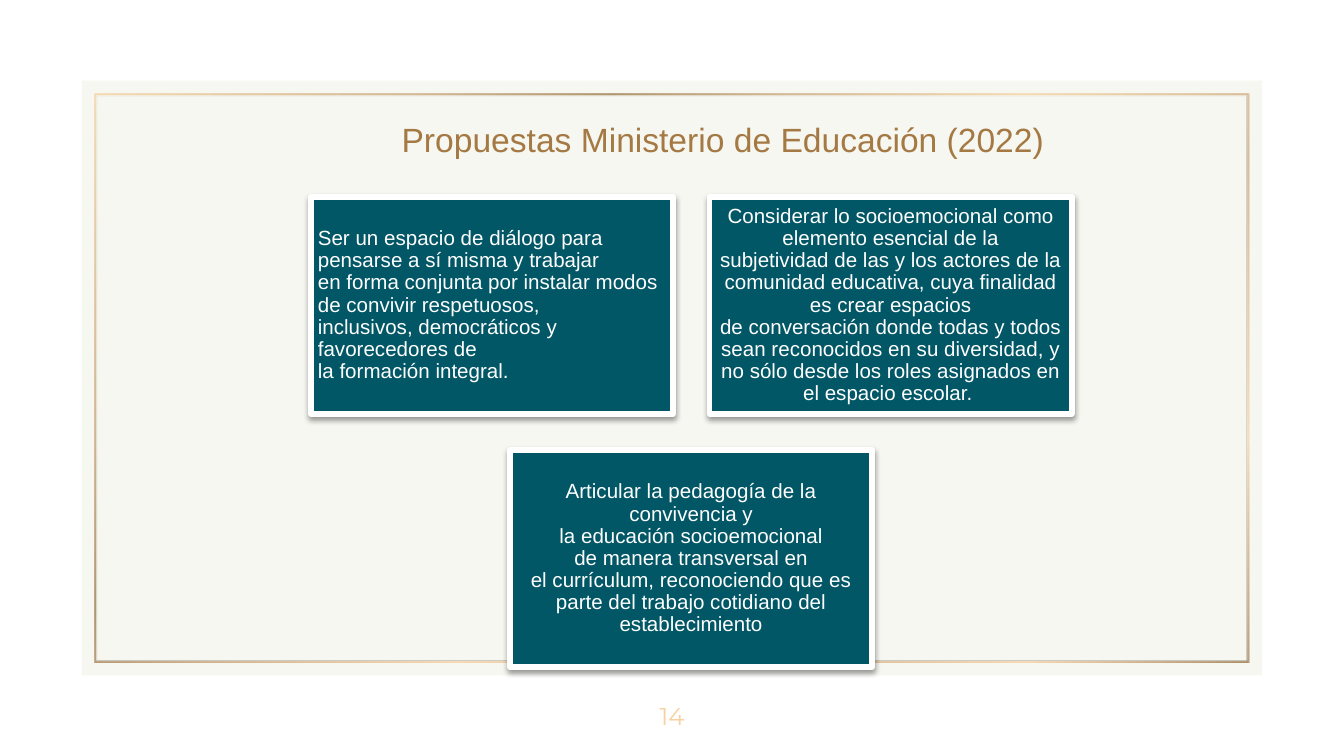
from dataclasses import dataclass

from lxml import etree
from pptx import Presentation
from pptx.dml.color import RGBColor
from pptx.enum.shapes import MSO_SHAPE as Shape
from pptx.enum.text import MSO_ANCHOR as Anchor, PP_ALIGN as Align
from pptx.oxml import parse_xml
from pptx.oxml.ns import nsdecls, qn
from pptx.util import Pt

PX = 4572  # 200 px to the inch
NBSP = chr(160)  # written as ~ in the texts below


@dataclass(frozen=True)
class Theme:
    panel: str = "F5F6F0"
    title: str = "A57944"
    card: str = "025766"
    white: str = "FFFFFF"
    shadow: str = "000000"
    light_gold: str = "F6D2A2"
    mid_gold: str = "C59F72"
    dark_gold: str = "997545"
    font: str = "Arial"
    number_font: str = "Montserrat"
    title_size: int = 18
    card_size: int = 11
    number_size: int = 13


class SlideBuilder:
    def __init__(self, slide, theme):
        self.slide = slide
        self.theme = theme

    def _shape(self, kind, box):
        shape = self.slide.shapes.add_shape(kind, *(n * PX for n in box))
        shape.shadow.inherit = False
        shape.line.fill.background()
        return shape

    def _write(self, shape, text, size, color, font, align, anchor, inset):
        frame = shape.text_frame
        frame.word_wrap = True
        frame.vertical_anchor = anchor
        frame.margin_left = frame.margin_right = inset[0] * PX
        frame.margin_top = frame.margin_bottom = inset[1] * PX
        paragraph = frame.paragraphs[0]
        paragraph.text = text.replace("~", NBSP)
        paragraph.alignment = align
        paragraph.font.name = font
        paragraph.font.size = Pt(size)
        paragraph.font.color.rgb = RGBColor.from_string(color)
        return paragraph

    def panel(self, box, color, opacity):
        panel = self._shape(Shape.RECTANGLE, box)
        panel.fill.solid()
        panel.fill.fore_color.rgb = RGBColor.from_string(color)
        fill_color = panel._element.spPr.find(qn("a:solidFill"))[0]
        etree.SubElement(fill_color, qn("a:alpha"), val=str(opacity * 1000))

    def gold_frame(self, box, stops, opacity):
        border = self._shape(Shape.FRAME, box)
        border.adjustments[0] = 0.004
        stop_xml = "".join(
            f'<a:gs pos="{pos * 1000}"><a:srgbClr val="{color}">'
            f'<a:alpha val="{opacity * 1000}"/></a:srgbClr></a:gs>'
            for pos, color in stops)
        gradient = parse_xml(
            f'<a:gradFill {nsdecls("a")} rotWithShape="1"><a:gsLst>{stop_xml}</a:gsLst>'
            '<a:lin ang="2700000" scaled="0"/></a:gradFill>')
        border._element.spPr.find(qn("a:prstGeom")).addnext(gradient)

    def text(self, box, text, size, color, font, align=Align.LEFT,
             anchor=Anchor.TOP, inset=(20, 10)):
        label = self.slide.shapes.add_textbox(*(n * PX for n in box))
        self._write(label, text, size, color, font, align, anchor, inset)

    def card(self, box, text, align):
        theme = self.theme
        card = self._shape(Shape.RECTANGLE, box)
        card.fill.solid()
        card.fill.fore_color.rgb = RGBColor.from_string(theme.card)
        card.line.color.rgb = RGBColor.from_string(theme.white)
        card.line.width = Pt(3)
        effects = card._element.spPr.find(qn("a:effectLst"))
        effects.append(parse_xml(
            f'<a:outerShdw {nsdecls("a")} blurRad="{Pt(3.1)}" dist="{Pt(1.6)}" '
            f'dir="5400000" rotWithShape="0"><a:srgbClr val="{theme.shadow}">'
            '<a:alpha val="38000"/></a:srgbClr></a:outerShdw>'))
        paragraph = self._write(card, text, theme.card_size, theme.white, theme.font,
                                align, Anchor.MIDDLE, (10, 10))
        paragraph.line_spacing = 0.9


PROPOSALS = [
    ("Ser un espacio de~diálogo~para pensarse a sí misma y trabajar en~forma conjunta "
     "por instalar modos de convivir respetuosos, inclusivos,~democráticos~y "
     "favorecedores de la~formación~integral.~", Align.LEFT),
    ("Considerar lo socioemocional como elemento esencial de la subjetividad~de las y "
     "los actores de la comunidad educativa, cuya finalidad es crear~espacios "
     "de~conversación~donde todas y todos sean reconocidos en su~diversidad, y "
     "no~sólo~desde los roles asignados en el espacio escolar.~", Align.CENTER),
    ("Articular la~pedagogía~de la convivencia y la~educación~socioemocional "
     "de~manera transversal en el~currículum, reconociendo que es parte "
     "del~trabajo cotidiano del establecimiento", Align.CENTER),
]


def main():
    theme = Theme()
    deck = Presentation()
    deck.slide_width, deck.slide_height = 2000 * PX, 1125 * PX
    builder = SlideBuilder(deck.slides.add_slide(deck.slide_layouts[6]), theme)

    # Backdrop
    light, mid, dark = theme.light_gold, theme.mid_gold, theme.dark_gold
    builder.panel((122, 120, 1756, 885), theme.panel, 87)
    builder.gold_frame((141, 140, 1718, 846), [
        (0, light), (20, mid), (30, dark), (39, mid),
        (54, light), (71, mid), (87, light), (100, dark)], 80)

    # Page number and title
    builder.text((940, 1005, 120, 120), "14", theme.number_size, light,
                 theme.number_font, Align.CENTER, Anchor.MIDDLE, (0, 0))
    builder.text((578, 167, 1028, 128), "Propuestas Ministerio~de Educación (2022)",
                 theme.title_size, theme.title, theme.font)

    # Proposals: two cards above, the third centred below them
    left, top, width, height, gap = 463, 293, 539, 323, 54
    step = width + gap
    places = [(0, 0), (step, 0), (step // 2, height + gap)]
    for (dx, dy), (text, align) in zip(places, PROPOSALS):
        builder.card((left + dx, top + dy, width, height), text, align)

    deck.save("out.pptx")


if __name__ == "__main__":
    main()
